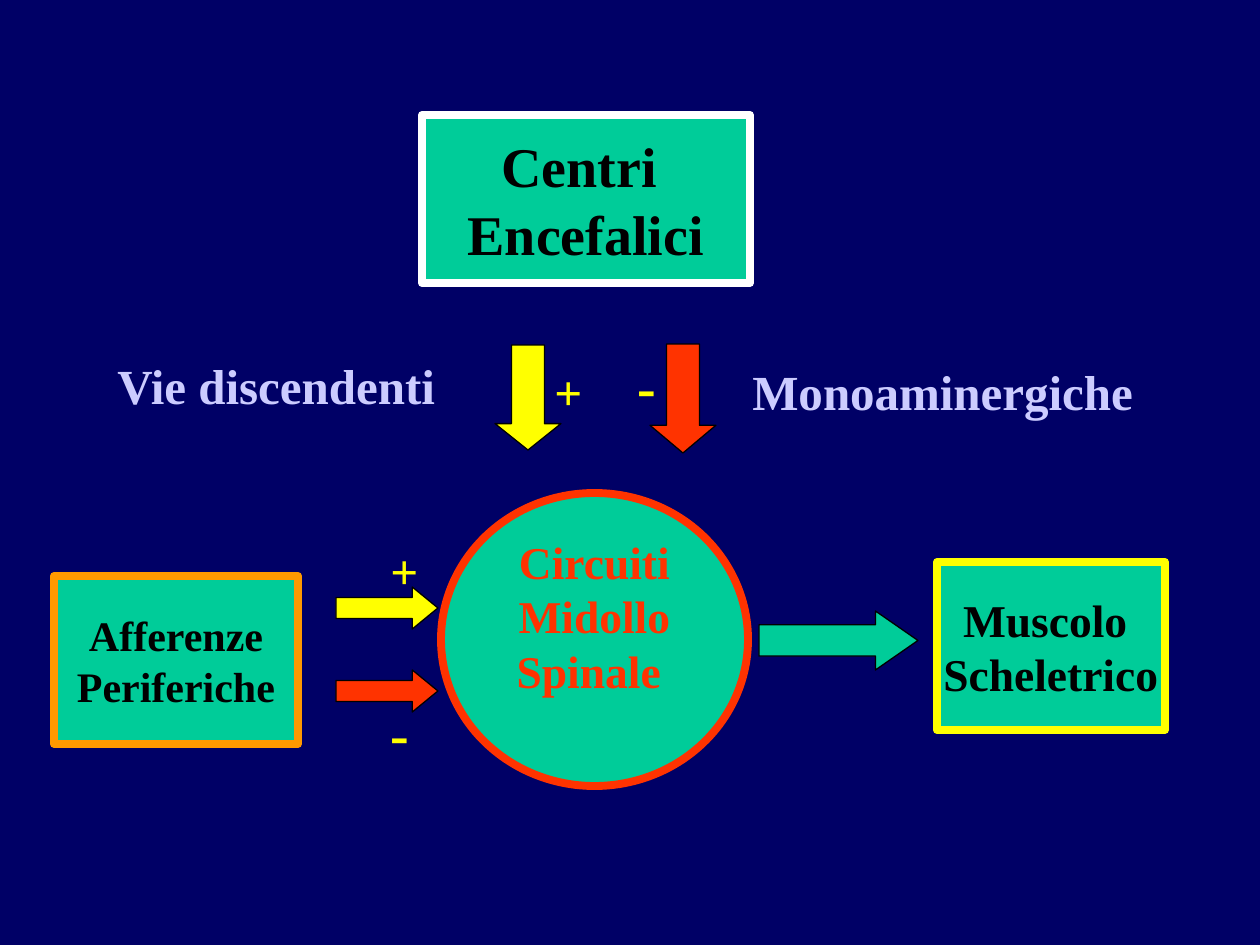
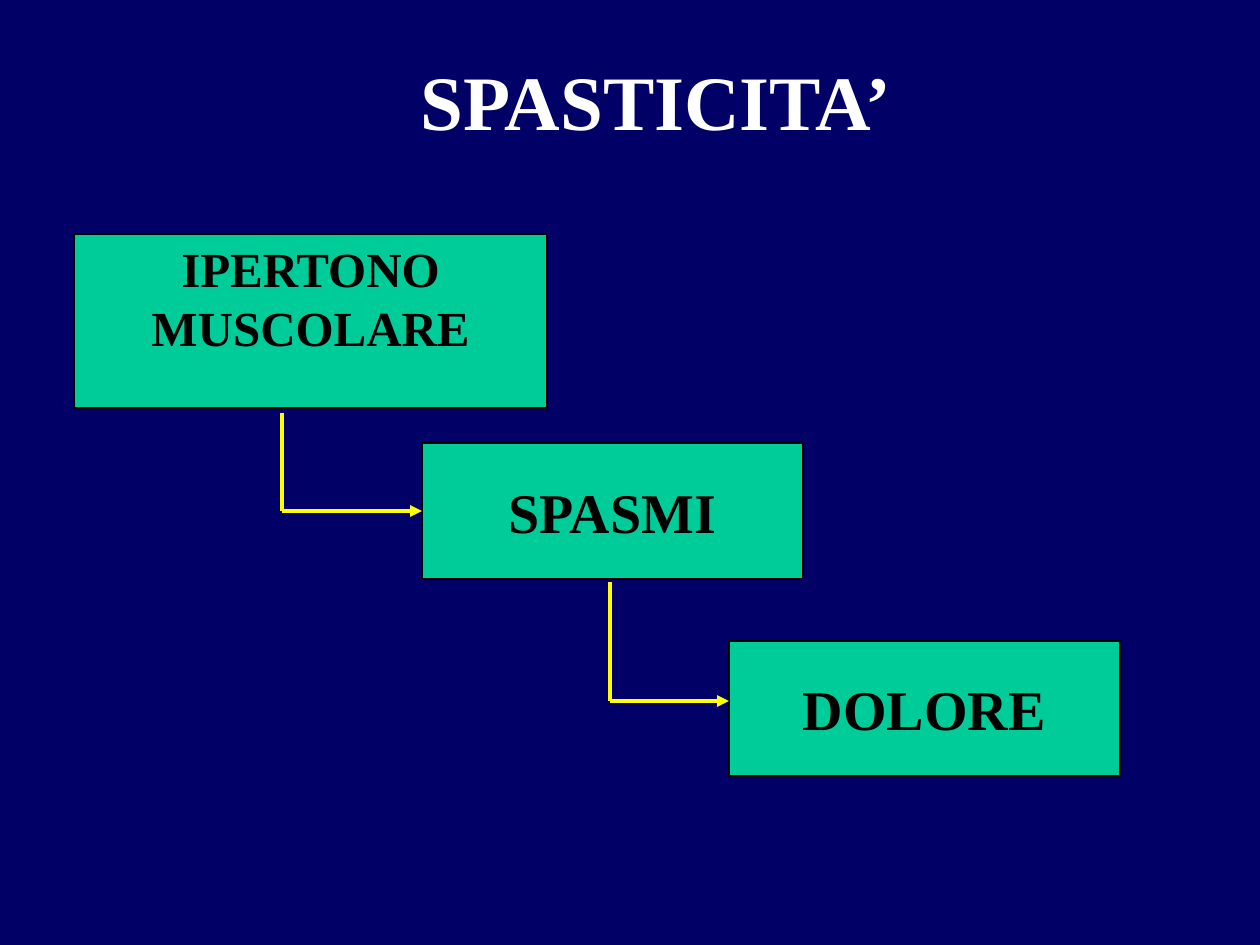
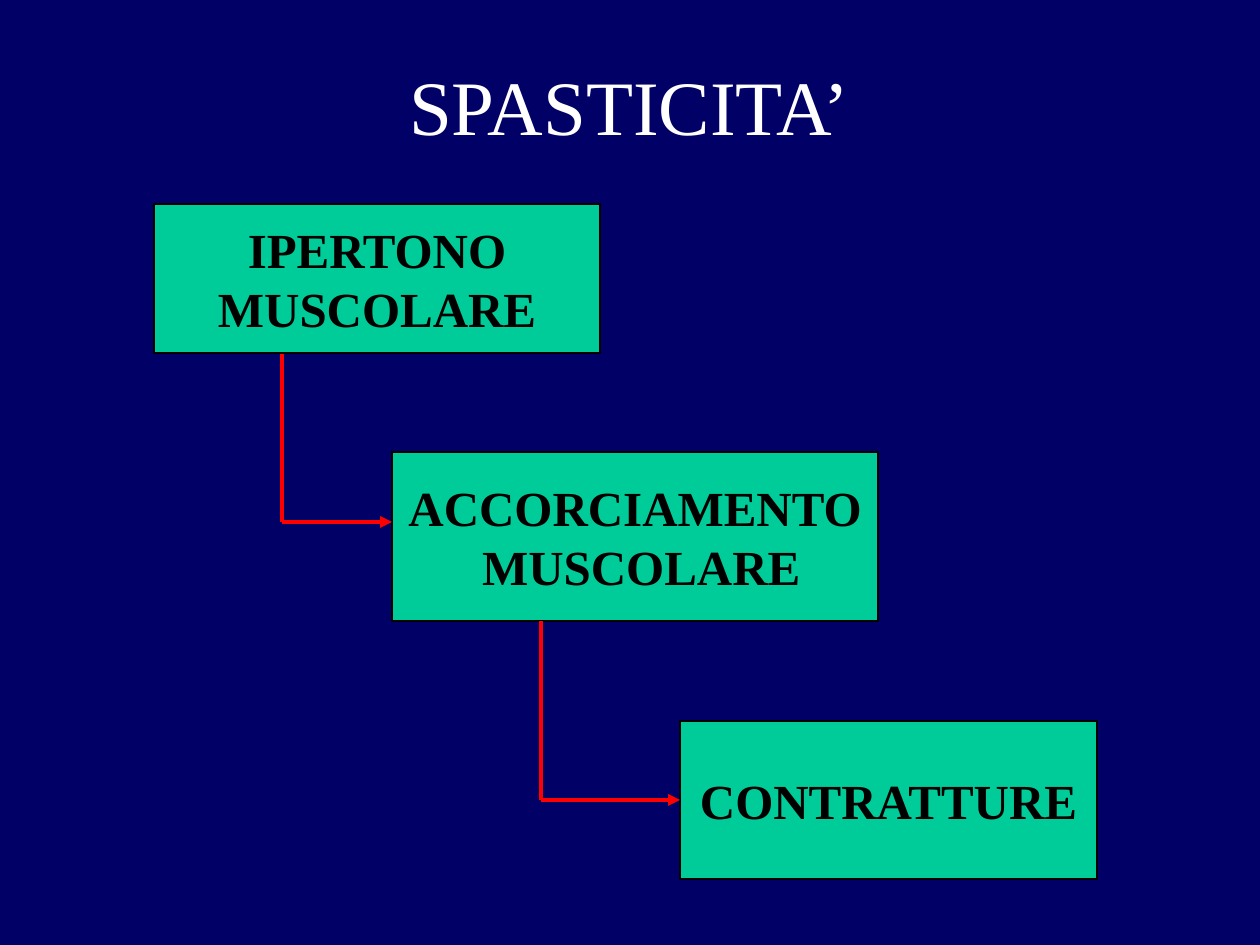
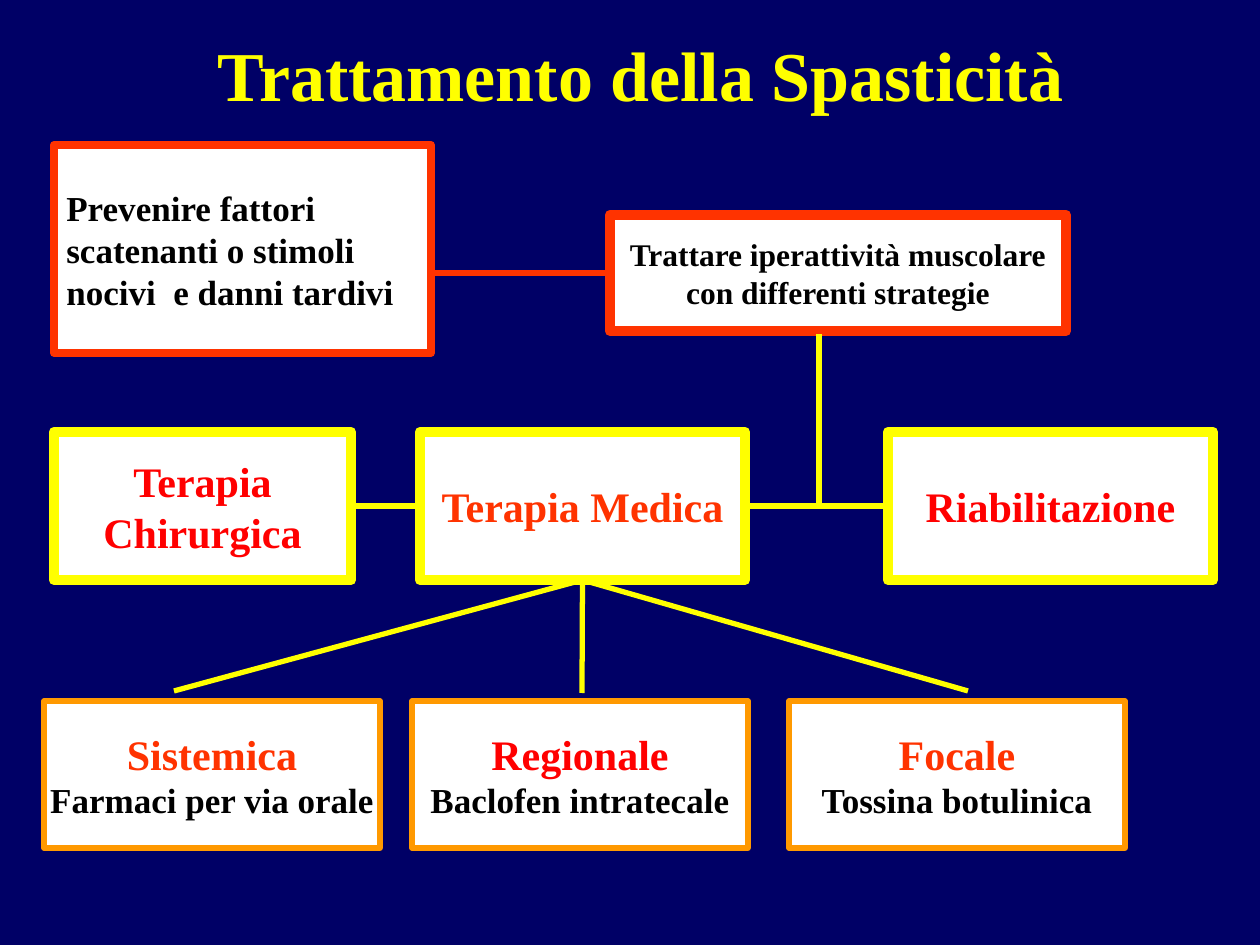
from dataclasses import dataclass
from typing import Any

from lxml.etree import SubElement
from pptx import Presentation
from pptx.dml.color import RGBColor
from pptx.enum.shapes import MSO_CONNECTOR as LINK, MSO_SHAPE as SHAPE
from pptx.enum.text import MSO_ANCHOR as ANCHOR, PP_ALIGN as ALIGN
from pptx.oxml.ns import qn
from pptx.util import Emu, Pt

PX = 914400 / 126
FONT = "Times New Roman"
COLORS = {
    "navy": "000066", "green": "00CC99", "white": "FFFFFF", "black": "000000",
    "yellow": "FFFF00", "vermilion": "FF3300", "red": "FF0000",
    "orange": "FF9900", "lilac": "CCCCFF",
}
TOP, LEFT, BOTTOM, RIGHT = range(4)


def px(value):
    return Emu(round(value * PX))


def color(name):
    return RGBColor.from_string(COLORS[name])


def write(frame, lines, align, bold=True):
    """Each line is (text, size, color name) and becomes one paragraph."""
    for index, (text, size, ink) in enumerate(lines):
        paragraph = frame.add_paragraph() if index else frame.paragraphs[0]
        paragraph.alignment = align
        run = paragraph.add_run()
        run.text = text
        run.font.name, run.font.size, run.font.bold = FONT, Pt(size), bold
        run.font.color.rgb = color(ink)


def same(size, ink, *texts):
    return [(text, size, ink) for text in texts]


@dataclass
class Area:
    """A region of a slide; its parts are placed from its top left corner."""
    slide: Any
    x: int = 0
    y: int = 0

    def place(self, box):
        x, y, width, height = box
        return px(self.x + x), px(self.y + y), px(width), px(height)

    def outline(self, kind, box, fill, edge, weight):
        shape = self.slide.shapes.add_shape(kind, *self.place(box))
        shape.shadow.inherit = False
        shape.fill.solid()
        shape.fill.fore_color.rgb = color(fill)
        shape.line.color.rgb = color(edge)
        shape.line.width = Pt(weight)
        return shape

    def node(self, box, lines, fill="green", edge="black", weight=1,
             kind=SHAPE.RECTANGLE, align=ALIGN.CENTER, lift=0):
        shape = self.outline(kind, box, fill, edge, weight)
        frame = shape.text_frame
        frame.word_wrap = False
        frame.vertical_anchor = ANCHOR.MIDDLE
        frame.margin_bottom = px(6 + lift)
        write(frame, lines, align)
        return shape

    def block_arrow(self, kind, box, fill, shaft, head):
        arrow = self.outline(kind, box, fill, "black", 0.75)
        arrow.adjustments[0], arrow.adjustments[1] = shaft, head

    def label(self, box, text, size, ink, align=ALIGN.LEFT,
              anchor=ANCHOR.TOP, bold=True):
        frame = self.slide.shapes.add_textbox(*self.place(box)).text_frame
        frame.word_wrap = True
        frame.vertical_anchor = anchor
        write(frame, same(size, ink, text), align, bold)

    def line(self, start, end, ink, weight, begin=None, finish=None, head=False):
        """begin and finish are (shape, side) pairs the line is joined to."""
        ends = [px(v) for x, y in (start, end) for v in (self.x + x, self.y + y)]
        link = self.slide.shapes.add_connector(LINK.STRAIGHT, *ends)
        link.line.color.rgb = color(ink)
        link.line.width = Pt(weight)
        if head:
            SubElement(link.line._get_or_add_ln(), qn("a:tailEnd"), type="triangle")
        SubElement(link._element.spPr, qn("a:effectLst"))
        if begin:
            link.begin_connect(*begin)
        if finish:
            link.end_connect(*finish)


def title(slide, box, text, size=44, ink="white", bold=True):
    Area(slide).label(box, text, size, ink, ALIGN.CENTER, ANCHOR.MIDDLE, bold)


# Slide 1: control of the spinal circuits
def brain_centres(area):
    area.node((317, 0, 328, 168), same(32, "black", "Centri ", "Encefalici"),
              edge="white", weight=4.5)
    area.block_arrow(SHAPE.DOWN_ARROW, (390, 230, 66, 105), "yellow", 0.5, 0.4)
    area.block_arrow(SHAPE.DOWN_ARROW, (545, 229, 66, 109), "vermilion", 0.5, 0.42)
    area.label((437, 240, 66, 72), "+", 28, "yellow")
    area.label((520, 230, 48, 79), "-", 32, "yellow")
    area.label((635, 240, 427, 72), "Monoaminergiche", 28, "lilac")
    area.label((0, 234, 367, 72), "Vie discendenti", 28, "lilac")


def peripheral_afferents(area):
    area.node((0, 42, 244, 168), same(24, "black", "Afferenze", "Periferiche"),
              edge="orange", weight=4.5)
    for y, fill in ((53, "yellow"), (136, "vermilion")):
        area.block_arrow(SHAPE.RIGHT_ARROW, (282, y, 102, 42), fill, 0.5, 0.61)
    area.label((324, 0, 69, 72), "+", 28, "yellow")
    area.label((324, 158, 44, 79), "-", 32, "yellow")


def spinal_output(area):
    area.node((0, 0, 307, 293),
              same(26, "vermilion", "Circuiti", "Midollo", "Spinale "),
              edge="vermilion", weight=4.5, kind=SHAPE.OVAL, lift=48)
    area.block_arrow(SHAPE.RIGHT_ARROW, (318, 118, 159, 59), "green", 0.53, 0.72)
    area.node((496, 69, 228, 168), same(26, "black", "Muscolo ", "Scheletrico"),
              edge="yellow", weight=4.5)


# Slides 2 and 3: boxes going down in steps
def cascade(area, steps, elbows, ink):
    """steps: (box, lines, lift); elbows: (x, start y, turn y) between steps."""
    nodes = [area.node(box, lines, lift=lift) for box, lines, lift in steps]
    for (x, start, turn), node, (box, _, _) in zip(elbows, nodes[1:], steps[1:]):
        left, top, _, height = box
        at_middle = turn == top + height / 2
        area.line((x, start), (x, turn), ink, 2.25)
        area.line((x, turn), (left, turn), ink, 2.25, head=True,
                  finish=(node, LEFT) if at_middle else None)


# Slide 4: treatment tree
def strategies(area):
    area.node((0, 0, 377, 208),
              same(20, "black", "Prevenire fattori", "scatenanti o stimoli",
                   "nocivi  e danni tardivi"),
              "white", "vermilion", 4.5, align=ALIGN.LEFT)
    treat = area.node((556, 70, 456, 116),
                      same(18, "black", "Trattare iperattività muscolare",
                           "con differenti strategie"),
                      "white", "vermilion", 6)
    area.line((378, 128), (556, 128), "vermilion", 3, finish=(treat, LEFT))
    area.line((765, 189), (765, 358), "yellow", 3)


def therapies(area):
    boxes = (
        (0, 297, same(24, "red", "Terapia", "Chirurgica")),
        (366, 325, same(24, "vermilion", "Terapia Medica")),
        (834, 325, same(24, "red", "Riabilitazione")),
    )
    surgical, medical, rehab = [
        area.node((x, 0, width, 148), lines, "white", "yellow", 6)
        for x, width, lines in boxes]
    area.line((366, 74), (297, 74), "yellow", 3, (medical, LEFT), (surgical, RIGHT))
    area.line((691, 74), (834, 74), "yellow", 3, (medical, RIGHT), (rehab, LEFT))
    for x, y in ((120, 259), (528, 261), (914, 259)):
        area.line((528, 148), (x, y), "yellow", 3, begin=(medical, BOTTOM))


def drug_routes(area):
    routes = (
        (0, "Sistemica", "vermilion", "Farmaci per via orale"),
        (368, "Regionale", "red", "Baclofen intratecale"),
        (745, "Focale", "vermilion", "Tossina botulinica"),
    )
    for x, route, ink, drug in routes:
        area.node((x, 0, 336, 147), [(route, 24, ink), (drug, 20, "black")],
                  "white", "orange", 3)


def main():
    prs = Presentation()
    prs.slide_width, prs.slide_height = px(1260), px(945)
    backdrop = prs.slide_master.background.fill
    backdrop.solid()
    backdrop.fore_color.rgb = color("navy")
    control, spasms, contractures, treatment = [
        prs.slides.add_slide(prs.slide_layouts[6]) for _ in range(4)]

    brain_centres(Area(control, 105, 115))
    peripheral_afferents(Area(control, 54, 534))
    spinal_output(Area(control, 441, 493))

    title(spasms, (105, 35, 1102, 129), "SPASTICITA’")
    cascade(Area(spasms, 74, 234), [
        ((0, 0, 473, 174), same(28, "black", "IPERTONO", "MUSCOLARE"), 48),
        ((348, 209, 381, 136), same(32, "black", "SPASMI"), 0),
        ((655, 407, 391, 135), same(32, "black", "DOLORE"), 0),
    ], [(208, 179, 277), (536, 348, 467)], "yellow")

    title(contractures, (94, 26, 1071, 158), "SPASTICITA’", bold=False)
    cascade(Area(contractures, 154, 204), [
        ((0, 0, 446, 149), same(28, "black", "IPERTONO", "MUSCOLARE"), 0),
        ((238, 248, 486, 169), same(28, "black", "ACCORCIAMENTO", " MUSCOLARE"), 0),
        ((526, 517, 417, 158), same(28, "black", "CONTRATTURE"), 0),
    ], [(128, 150, 318), (387, 417, 596)], "red")

    title(treatment, (105, 42, 1071, 63), "Trattamento della Spasticità",
          40, "yellow")
    strategies(Area(treatment, 54, 145))
    therapies(Area(treatment, 54, 432))
    drug_routes(Area(treatment, 44, 701))

    prs.save("out.pptx")


if __name__ == "__main__":
    main()
